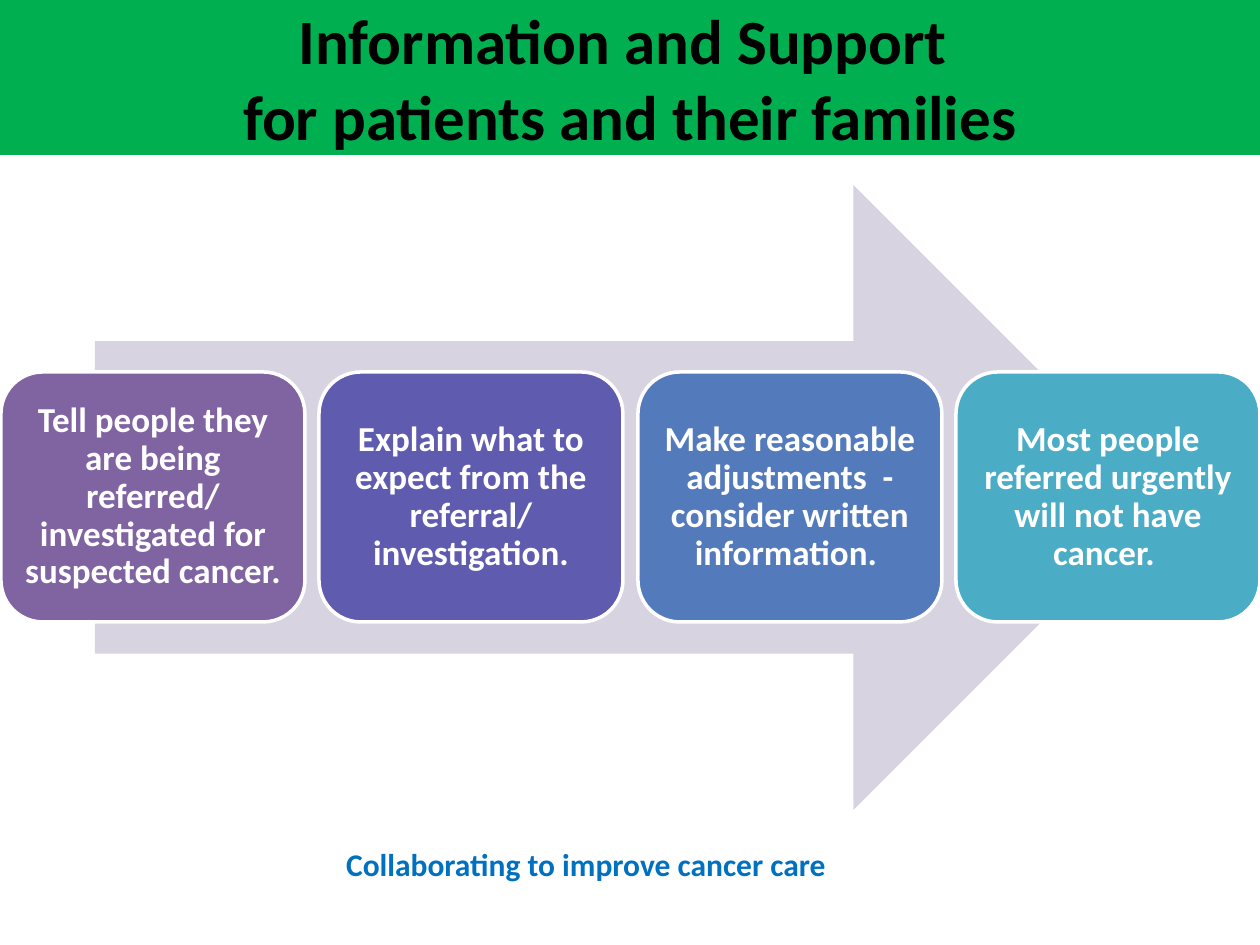
from dataclasses import dataclass

from pptx import Presentation
from pptx.dml.color import RGBColor
from pptx.enum.shapes import MSO_SHAPE
from pptx.enum.text import MSO_ANCHOR, PP_ALIGN
from pptx.shapes.autoshape import Shape
from pptx.slide import Slide
from pptx.util import Emu, Pt

RECTANGLE = MSO_SHAPE.RECTANGLE
ROUNDED = MSO_SHAPE.ROUNDED_RECTANGLE
RIGHT_ARROW = MSO_SHAPE.RIGHT_ARROW
CENTER = PP_ALIGN.CENTER
MIDDLE = MSO_ANCHOR.MIDDLE
EMU_PER_INCH = 914400
PX_PER_INCH = 126


@dataclass(frozen=True)
class Theme:
    font: str = "Calibri"
    banner: str = "00B050"
    title: str = "000000"
    arrow: str = "D8D3E0"
    white: str = "FFFFFF"
    footer: str = "0070C0"
    title_size: int = 36
    card_size: int = 20
    footer_size: int = 18
    border_width: int = 2


@dataclass(frozen=True)
class Box:
    left: int
    top: int
    width: int
    height: int


@dataclass(frozen=True)
class Card:
    text: str
    color: str


THEME = Theme()
SLIDE_WIDTH, SLIDE_HEIGHT = 1260, 945
BANNER = Box(0, 0, SLIDE_WIDTH, 155)
ARROW = Box(95, 185, 1071, 625)
FIRST_CARD = Box(1, 372, 304, 250)
FOOTER = Box(312, 839, 548, 50)
CARD_INSET = 10
CARDS = [
    Card("Tell people they are being referred/ investigated for suspected cancer.", "8064A2"),
    Card("Explain what to expect from the referral/ investigation.", "5F5BAE"),
    Card("Make reasonable adjustments  - consider written information. ", "537ABA"),
    Card("Most people referred urgently will not have cancer. ", "4BACC6"),
]


def px(length: int) -> Emu:
    return Emu(round(length * EMU_PER_INCH / PX_PER_INCH))


def place(box: Box) -> tuple[Emu, Emu, Emu, Emu]:
    return px(box.left), px(box.top), px(box.width), px(box.height)


def add_filled_shape(slide: Slide, kind: MSO_SHAPE, box: Box, color: str) -> Shape:
    shape = slide.shapes.add_shape(kind, *place(box))
    shape.shadow.inherit = False
    shape.fill.solid()
    shape.fill.fore_color.rgb = RGBColor.from_string(color)
    shape.line.fill.background()
    return shape


def write_text(shape: Shape, text: str, size: int, color: str, spacing: float = 1.0) -> None:
    text_frame = shape.text_frame
    text_frame.text = text
    text_frame.word_wrap = True
    paragraph = text_frame.paragraphs[0]
    paragraph.alignment = CENTER
    paragraph.line_spacing = spacing
    for run in paragraph.runs:
        run.font.name = THEME.font
        run.font.size = Pt(size)
        run.font.bold = True
        run.font.color.rgb = RGBColor.from_string(color)


def add_card(slide: Slide, card: Card, box: Box) -> None:
    shape = add_filled_shape(slide, ROUNDED, box, card.color)
    shape.line.color.rgb = RGBColor.from_string(THEME.white)
    shape.line.width = Pt(THEME.border_width)
    write_text(shape, card.text, THEME.card_size, THEME.white, 0.9)
    text_frame = shape.text_frame
    text_frame.vertical_anchor = MIDDLE
    text_frame.margin_left = text_frame.margin_right = px(CARD_INSET)
    text_frame.margin_top = text_frame.margin_bottom = px(CARD_INSET)


def add_cards(slide: Slide) -> None:
    last_left = SLIDE_WIDTH - FIRST_CARD.width
    travel = last_left - FIRST_CARD.left
    for index, card in enumerate(CARDS):
        left = FIRST_CARD.left + round(travel * index / (len(CARDS) - 1))
        add_card(slide, card, Box(left, FIRST_CARD.top, FIRST_CARD.width, FIRST_CARD.height))


def main() -> None:
    presentation = Presentation()
    presentation.slide_width = px(SLIDE_WIDTH)
    presentation.slide_height = px(SLIDE_HEIGHT)
    slide = presentation.slides.add_slide(presentation.slide_layouts[6])

    banner = add_filled_shape(slide, RECTANGLE, BANNER, THEME.banner)
    banner.text_frame.vertical_anchor = MIDDLE
    title = "Information and Support \vfor patients and their families"
    write_text(banner, title, THEME.title_size, THEME.title)

    add_filled_shape(slide, RIGHT_ARROW, ARROW, THEME.arrow)
    add_cards(slide)

    footer = slide.shapes.add_textbox(*place(FOOTER))
    write_text(footer, "Collaborating to improve cancer care", THEME.footer_size, THEME.footer)
    presentation.save("out.pptx")


if __name__ == "__main__":
    main()
